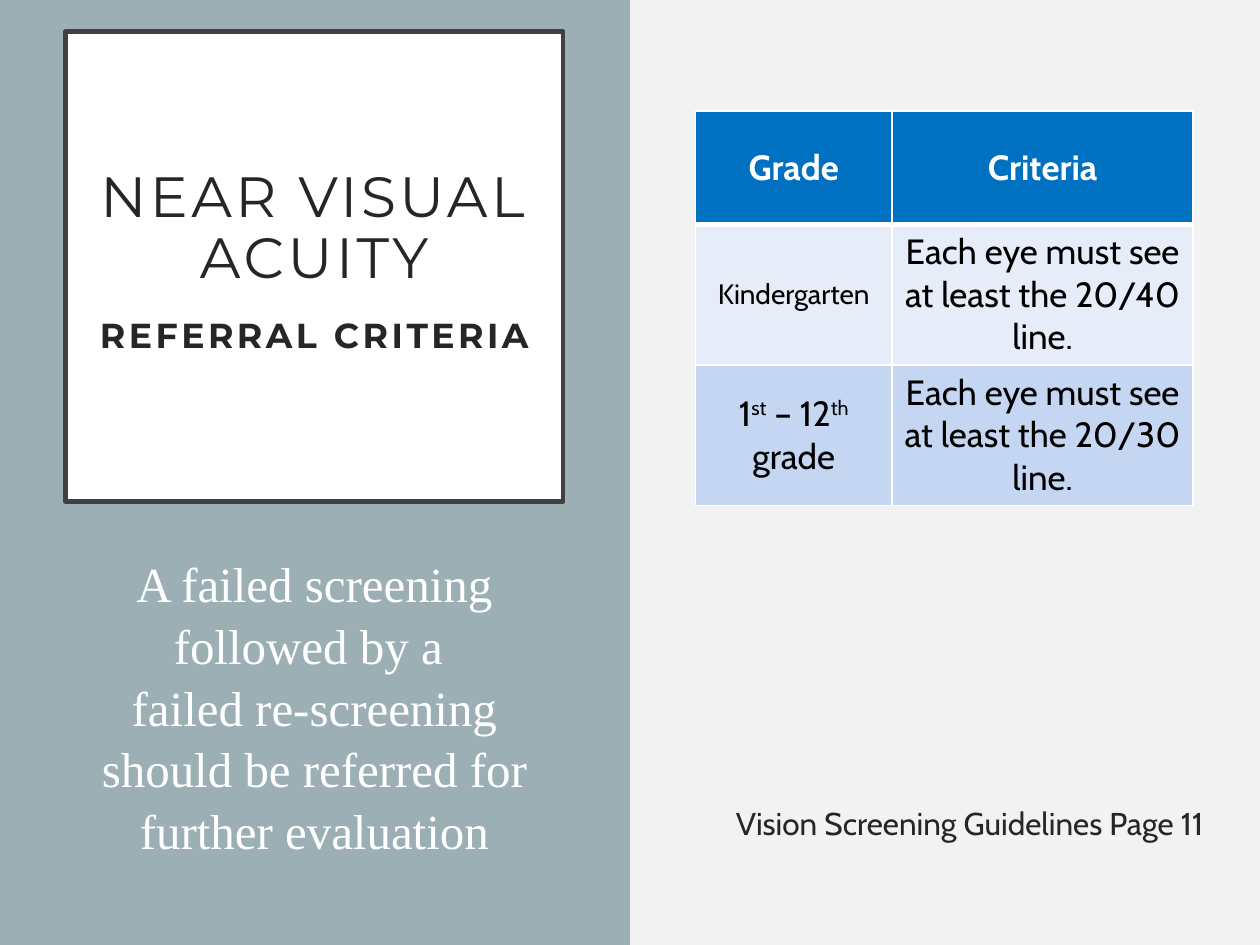
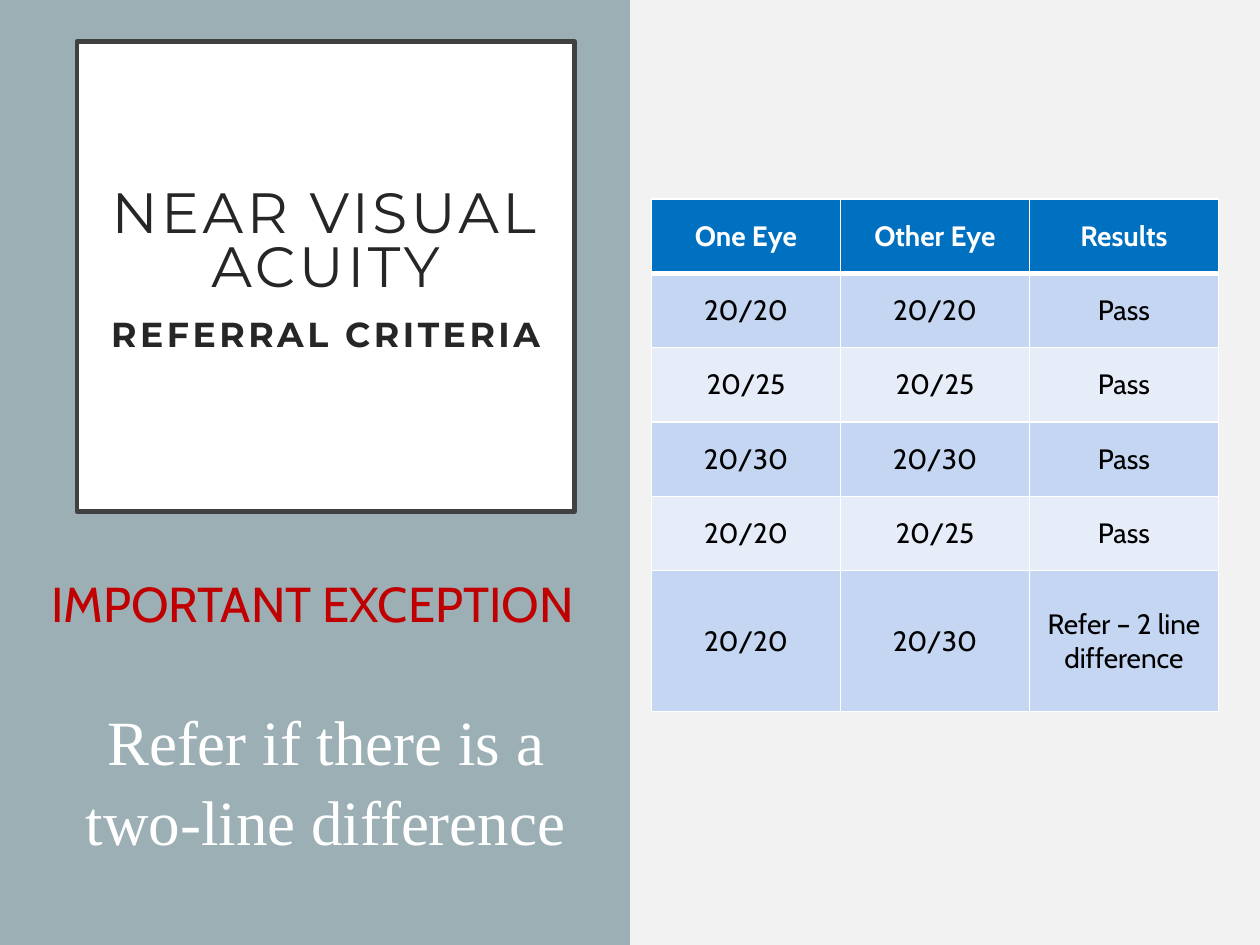
from lxml import etree
from pptx import Presentation
from pptx.dml.color import RGBColor
from pptx.enum.shapes import MSO_SHAPE
from pptx.enum.text import MSO_ANCHOR, PP_ALIGN
from pptx.oxml.ns import qn
from pptx.util import Inches, Pt

RECTANGLE = MSO_SHAPE.RECTANGLE
CENTER, LEFT = PP_ALIGN.CENTER, PP_ALIGN.LEFT
MIDDLE = MSO_ANCHOR.MIDDLE

BACKGROUND, BAND, FRAME = "F2F2F2", "9BAFB5", "404040"
WHITE, BLACK, INK, RED = "FFFFFF", "000000", "262626", "C00000"
HEADER, LIGHT, DARK = "0070C0", "E6EDF8", "C5D6F2"
HEADING_FONT, TEXT_FONT, BODY_FONT = "Montserrat", "Cabin", "Times New Roman"

# Table cells are lists of (text, superscript) runs where plain text is not enough.
slides = [
    {
        "title_at": (0.52, 0.25), "title_spacing": 0.9, "title_gap": 15.5,
        "table_at": (5.52, 0.88), "columns": [1.56, 2.39], "heights": [0.9, 1.1, 1.1],
        "bands": [LIGHT, DARK], "size": 20, "small_cells": ["Kindergarten"],
        "rows": [
            ["Grade", "Criteria"],
            ["Kindergarten", "Each eye must see at least the 20/40 line."],
            [[("1", False), ("st", True), (" – 12", False), ("th", True), (" grade", False)],
             "Each eye must see at least the 20/30 line."],
        ],
        "texts": [
            {"at": (0.52, 3.91, 3.95, 3.42), "top": 0.46, "align": CENTER, "spacing": 1.05,
             "text": "A failed screening followed by a \vfailed re-screening should be "
                     "referred for further evaluation",
             "format": {"size": 28, "font": BODY_FONT, "color": WHITE}},
            {"at": (5.67, 6.33, 4.05, 0.4), "top": 0.05, "align": CENTER, "spacing": 1.0,
             "text": "Vision Screening Guidelines Page 11",
             "format": {"size": 18, "font": TEXT_FONT, "color": INK}},
        ],
    },
    {
        "title_at": (0.61, 0.33), "title_spacing": 0.8, "title_gap": 13,
        "table_at": (5.17, 1.58), "columns": [1.5] * 3, "heights": [0.59] * 5 + [1.12],
        "bands": [DARK, LIGHT], "size": 16, "small_cells": [],
        "rows": [
            ["One Eye", "Other Eye", "Results"],
            ["20/20", "20/20", "Pass"],
            ["20/25", "20/25", "Pass"],
            ["20/30", "20/30", "Pass"],
            ["20/20", "20/25", "Pass"],
            ["20/20", "20/30", "Refer – 2 line difference"],
        ],
        "texts": [
            {"at": (0.49, 5.5, 4.19, 1.44), "top": 0.05, "align": CENTER, "spacing": 1.05,
             "text": "Refer if there is a two-line difference",
             "format": {"size": 36, "font": BODY_FONT, "color": WHITE}},
            {"at": (0.31, 4.5, 4.56, 0.57), "top": 0.05, "align": LEFT, "spacing": 1.0,
             "text": "IMPORTANT EXCEPTION",
             "format": {"size": 28, "font": TEXT_FONT, "color": RED}},
        ],
    },
]


def paint(fill, color):
    fill.solid()
    fill.fore_color.rgb = RGBColor.from_string(color)


def write(paragraph, text, size, font, color, bold=False, superscript=False, tracking=0):
    """Add text to the paragraph; a vertical tab in it becomes a line break."""
    for index, part in enumerate(text.split("\v")):
        if index:
            paragraph.add_line_break()
        run = paragraph.add_run()
        run.text = part
        run.font.size, run.font.name, run.font.bold = Pt(size), font, bold
        paint(run.font.fill, color)
        properties = run.font._element
        if superscript:
            properties.set("baseline", "30000")
        if tracking:
            properties.set("spc", str(tracking * 100))


presentation = Presentation()
presentation.slide_width, presentation.slide_height = Inches(10), Inches(7.5)
title_only = presentation.slide_layouts[5]

for content in slides:
    slide = presentation.slides.add_slide(title_only)
    paint(slide.background.fill, BACKGROUND)

    # Left band, behind everything else
    band = slide.shapes.add_shape(RECTANGLE, 0, 0, Inches(5), Inches(7.5))
    band.shadow.inherit = False
    paint(band.fill, BAND)
    band.line.fill.background()
    slide.shapes._spTree.insert(2, band._element)

    # Framed title
    title = slide.shapes.title
    title.left, title.top = [Inches(value) for value in content["title_at"]]
    title.width, title.height = Inches(3.95), Inches(3.73)
    paint(title.fill, WHITE)
    paint(title.line.fill, FRAME)
    title.line.width = Pt(2.5)
    frame = title.text_frame
    frame.word_wrap = True
    frame.vertical_anchor = MIDDLE
    frame.margin_left = frame.margin_right = frame.margin_top = Inches(0.2)
    frame.margin_bottom = Inches(0.27)
    heading, subheading = frame.paragraphs[0], frame.add_paragraph()
    for paragraph, gap in ((heading, 0), (subheading, content["title_gap"])):
        paragraph.alignment = CENTER
        paragraph.line_spacing = content["title_spacing"]
        paragraph.space_before = Pt(gap)
    write(heading, "NEAR VISUAL ACUITY", 32.4, HEADING_FONT, INK, tracking=2)
    write(subheading, "REFERRAL CRITERIA", 19.8, HEADING_FONT, INK, bold=True, tracking=2)

    # Criteria table
    rows, columns, heights = content["rows"], content["columns"], content["heights"]
    left, top = content["table_at"]
    table = slide.shapes.add_table(
        len(rows), len(columns), Inches(left), Inches(top),
        Inches(sum(columns)), Inches(sum(heights))).table
    for column, width in zip(table.columns, columns):
        column.width = Inches(width)
    for row, height in zip(table.rows, heights):
        row.height = Inches(height)
    for row_index, row in enumerate(rows):
        is_header = row_index == 0
        for column_index, value in enumerate(row):
            cell = table.cell(row_index, column_index)
            cell.vertical_anchor = MIDDLE
            cell.margin_left = cell.margin_right = Inches(0.06)
            cell.margin_top = cell.margin_bottom = Inches(0.05)
            borders = {"a:lnL": 1, "a:lnR": 1, "a:lnT": 3 if row_index == 1 else 1,
                       "a:lnB": 3 if is_header else 1}
            for side, width in borders.items():
                border = etree.SubElement(cell._tc.get_or_add_tcPr(), qn(side), w=str(Pt(width)))
                border_fill = etree.SubElement(border, qn("a:solidFill"))
                etree.SubElement(border_fill, qn("a:srgbClr"), val=WHITE)
            paint(cell.fill, HEADER if is_header else content["bands"][(row_index - 1) % 2])
            paragraph = cell.text_frame.paragraphs[0]
            paragraph.alignment = CENTER
            size = 16 if value in content["small_cells"] else content["size"]
            runs = [(value, False)] if isinstance(value, str) else value
            for text, superscript in runs:
                write(paragraph, text, size, TEXT_FONT, WHITE if is_header else BLACK,
                      bold=is_header, superscript=superscript)

    # Free texts
    for item in content["texts"]:
        box = slide.shapes.add_textbox(*[Inches(value) for value in item["at"]])
        frame = box.text_frame
        frame.word_wrap = True
        frame.margin_top = Inches(item["top"])
        paragraph = frame.paragraphs[0]
        paragraph.alignment = item["align"]
        paragraph.line_spacing = item["spacing"]
        write(paragraph, item["text"], **item["format"])

presentation.save("out.pptx")
